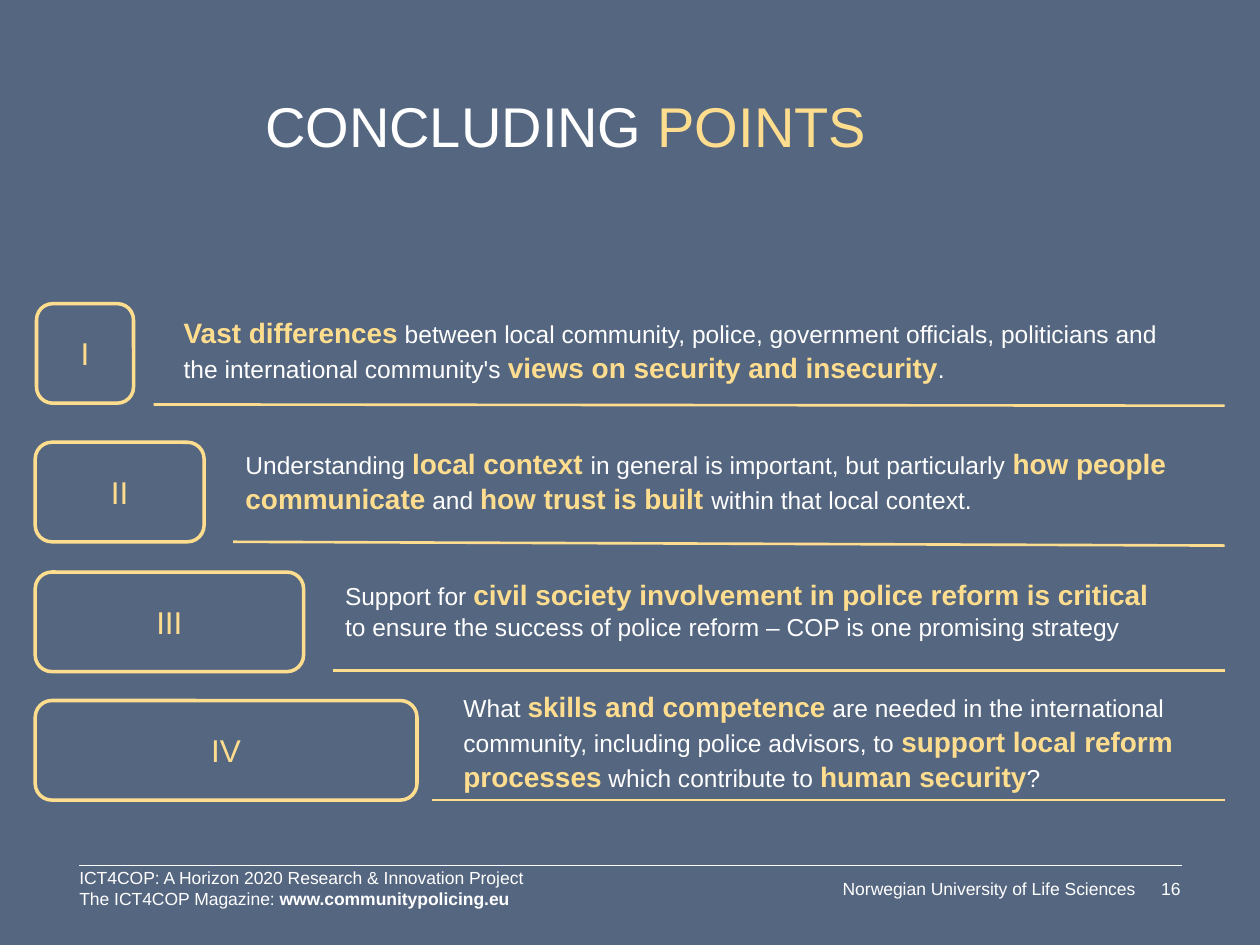
"""Build the concluding points slide with four numbered statements."""
from lxml.etree import SubElement
from pptx import Presentation
from pptx.dml.color import RGBColor
from pptx.enum.shapes import MSO_CONNECTOR, MSO_SHAPE
from pptx.enum.text import MSO_ANCHOR, MSO_AUTO_SIZE, PP_ALIGN
from pptx.oxml.ns import qn
from pptx.util import Pt

PX = 9144
SLATE = RGBColor(0x55, 0x66, 0x80)
WHITE = RGBColor(0xFF, 0xFF, 0xFF)
GOLD = RGBColor(0xFE, 0xDE, 0x8E)


def add_run(paragraph, text, size, color, bold=False):
    run = paragraph.add_run()
    run.text = text
    run.font.name = "Arial"
    run.font.size = Pt(size)
    run.font.color.rgb = color
    run.font.bold = bold


def add_rule(start_x, start_y, end_x, end_y, color, width):
    rule = slide.shapes.add_connector(
        MSO_CONNECTOR.STRAIGHT, start_x * PX, start_y * PX, end_x * PX, end_y * PX)
    rule.line.color.rgb = color
    rule.line.width = Pt(width)
    SubElement(rule._element.spPr, qn("a:effectLst"))


presentation = Presentation()
presentation.slide_width = 1000 * PX
presentation.slide_height = 750 * PX
slide = presentation.slides.add_slide(presentation.slide_layouts[5])
slide.background.fill.solid()
slide.background.fill.fore_color.rgb = SLATE

title = slide.shapes.title
title.left, title.top, title.width, title.height = 12 * PX, 72 * PX, 874 * PX, 54 * PX
heading = title.text_frame
heading.auto_size = MSO_AUTO_SIZE.NONE
heading.vertical_anchor = MSO_ANCHOR.BOTTOM
heading.margin_left = heading.margin_right = heading.margin_top = heading.margin_bottom = 0
heading.paragraphs[0].alignment = PP_ALIGN.CENTER
add_run(heading.paragraphs[0], "CONCLUDING ", 32, WHITE)
add_run(heading.paragraphs[0], "POINTS", 32, GOLD)

add_rule(63, 687, 938, 687, WHITE, 1)
footers = [
    (585, 697, 316, 17, PP_ALIGN.RIGHT, ["Norwegian University of Life Sciences"]),
    (904, 697, 33, 17, PP_ALIGN.RIGHT, ["16"]),
    (63, 688, 520, 34, PP_ALIGN.LEFT, [
        "ICT4COP: A Horizon 2020 Research & Innovation Project",
        "The ICT4COP Magazine: *www.communitypolicing.eu*"]),
]
for left, top, width, height, alignment, lines in footers:
    footer = slide.shapes.add_textbox(left * PX, top * PX, width * PX, height * PX).text_frame
    footer.word_wrap = True
    footer.vertical_anchor = MSO_ANCHOR.MIDDLE
    footer.margin_left = footer.margin_right = footer.margin_top = footer.margin_bottom = 0
    for index, line in enumerate(lines):
        paragraph = footer.add_paragraph() if index else footer.paragraphs[0]
        paragraph.alignment = alignment
        for part, text in enumerate(line.split("*")):
            if text:
                add_run(paragraph, text, 10, WHITE, part % 2 == 1)

points = [
    ("I", (29, 241, 77), (122, 321, 322), (136, 244, 803, 64),
     "*Vast differences* between local community, police, government officials, "
     "politicians and the international community's *views on security and insecurity*."),
    ("II", (28, 351, 134), (185, 430, 433), (185, 348, 793, 88),
     "Understanding *local context *in general is important, but particularly "
     "*how people communicate* and *how trust is built *within that local context."),
    ("III", (28, 454, 213), (264, 532, 532), (264, 452, 676, 61),
     "Support for *civil society involvement in police reform is critical* to ensure "
     "the success of police reform – COP is one promising strategy"),
    ("IV", (28, 556, 303), (343, 635, 635), (358, 541, 599, 91),
     "What *skills and competence* are needed in the international community, including "
     "police advisors, to *support local reform processes* which contribute to "
     "*human security*?"),
]
for numeral, (left, top, width), (rule_x, rule_y, rule_end_y), area, statement in points:
    badge = slide.shapes.add_shape(
        MSO_SHAPE.ROUNDED_RECTANGLE, left * PX, top * PX, width * PX, 79 * PX)
    badge.shadow.inherit = False
    badge.fill.background()
    badge.line.color.rgb = GOLD
    badge.line.width = Pt(2)
    badge.text_frame.vertical_anchor = MSO_ANCHOR.MIDDLE
    badge.text_frame.paragraphs[0].alignment = PP_ALIGN.CENTER
    add_run(badge.text_frame.paragraphs[0], numeral, 18, GOLD)

    add_rule(rule_x, rule_y, 972, rule_end_y, GOLD, 1.5)

    body = slide.shapes.add_textbox(*[length * PX for length in area]).text_frame
    body.word_wrap = True
    body.paragraphs[0].line_spacing = 1.05
    for part, text in enumerate(statement.split("*")):
        if text and part % 2:
            add_run(body.paragraphs[0], text, 16, GOLD, True)
        elif text:
            add_run(body.paragraphs[0], text, 14, WHITE)

presentation.save("out.pptx")
